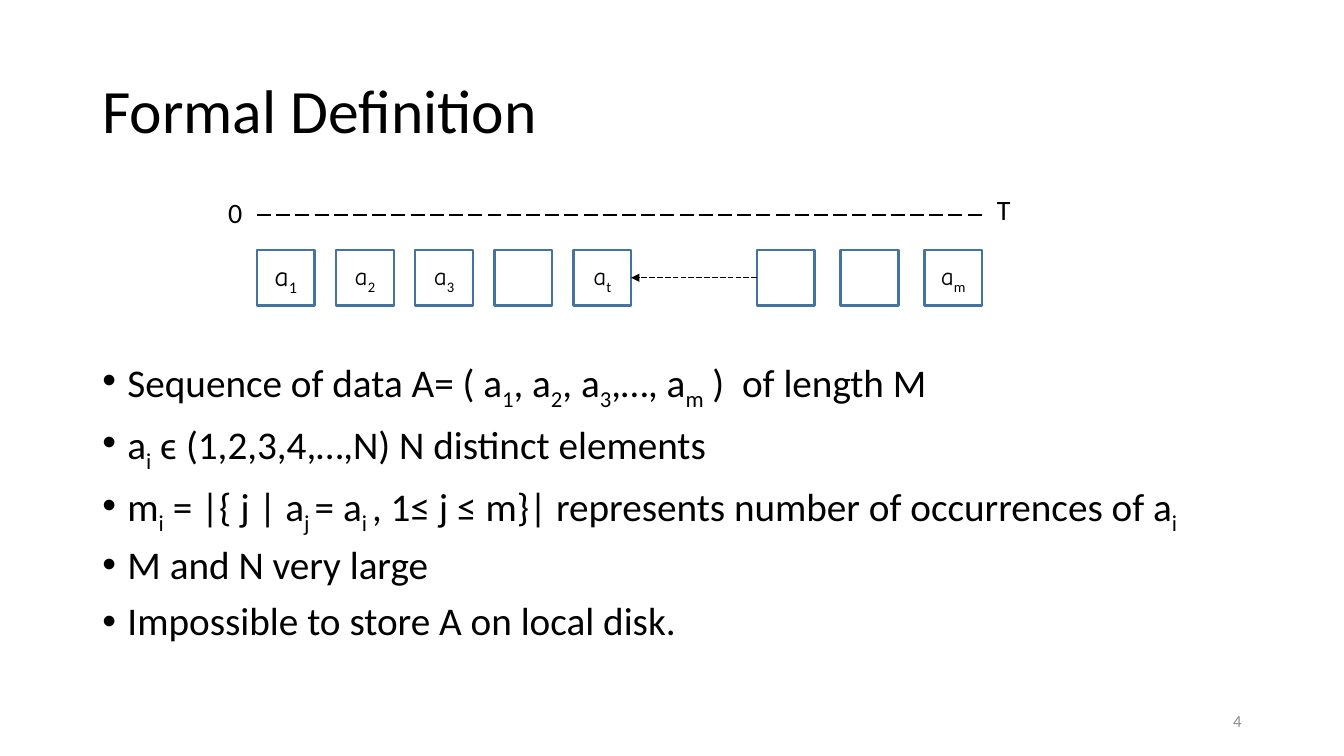
"""Builds a slide that defines a data stream formally."""
from dataclasses import dataclass

from lxml import etree
from pptx import Presentation
from pptx import util as u
from pptx.dml.color import RGBColor
from pptx.enum import dml, shapes, text
from pptx.oxml.ns import qn


@dataclass(frozen=True)
class Theme:
    ink: RGBColor = RGBColor.from_string("000000")
    muted: RGBColor = RGBColor.from_string("8C8C8C")
    outline: RGBColor = RGBColor.from_string("43739E")
    font: str = "Calibri"
    symbol_font: str = "Comic Neue"
    title: int = 44
    body: int = 28
    label: int = 20
    symbol: int = 18
    footer: int = 12


class Deck:
    def __init__(self, theme, width, height):
        self.t = theme
        self.prs = Presentation()
        self.prs.slide_width, self.prs.slide_height = u.Pt(width), u.Pt(height)
        self.s = self.prs.slides.add_slide(self.prs.slide_layouts[5])

    def style(self, r, size, color=None, font=None):
        r.font.size = u.Pt(size)
        r.font.name = font or self.t.font
        r.font.color.rgb = color or self.t.ink

    def runs(self, p, marked, size, font=None):
        for i, part in enumerate(marked.split("~")):
            if part:
                r = p.add_run()
                r.text = part
                self.style(r, size, font=None if i % 2 else font)
                if i % 2:
                    r.font._rPr.set("baseline", "-25000")

    def title(self, words, x, y, w, h):
        sp = self.s.shapes.title
        sp.left, sp.top, sp.width, sp.height = map(u.Pt, (x, y, w, h))
        tf = sp.text_frame
        tf.text = words
        tf.vertical_anchor = text.MSO_ANCHOR.MIDDLE
        p = tf.paragraphs[0]
        p.alignment, p.line_spacing = text.PP_ALIGN.LEFT, 0.9
        self.style(p.runs[0], self.t.title)

    def frame(self, x, y, w, h):
        tf = self.s.shapes.add_textbox(*map(u.Pt, (x, y, w, h))).text_frame
        tf.word_wrap = True
        return tf

    def label(self, words, x, y, w, h, size, align=text.PP_ALIGN.CENTER, color=None):
        tf = self.frame(x, y, w, h)
        tf.vertical_anchor = text.MSO_ANCHOR.MIDDLE
        tf.text = words
        p = tf.paragraphs[0]
        p.alignment = align
        self.style(p.runs[0], size, color)

    def bullets(self, items, x, y, w, h):
        tf = self.frame(x, y, w, h)
        for i, item in enumerate(items):
            p = tf.add_paragraph() if i else tf.paragraphs[0]
            p.line_spacing = 0.9
            p.space_before = u.Pt(10 if i else 0)
            pPr = p._p.get_or_add_pPr()
            pPr.set("marL", str(u.Pt(18)))
            pPr.set("indent", str(-u.Pt(18)))
            etree.SubElement(pPr, qn("a:buFont")).set("typeface", "Arial")
            etree.SubElement(pPr, qn("a:buChar")).set("char", "•")
            self.runs(p, item, self.t.body)

    def cell(self, marked, x, y, w, h, size):
        sp = self.s.shapes.add_shape(shapes.MSO_SHAPE.RECTANGLE, *map(u.Pt, (x, y, w, h)))
        sp.shadow.inherit = False
        sp.fill.background()
        sp.line.color.rgb = self.t.outline
        sp.line.width = u.Pt(1.75)
        tf = sp.text_frame
        tf.vertical_anchor = text.MSO_ANCHOR.MIDDLE
        p = tf.paragraphs[0]
        p.alignment = text.PP_ALIGN.CENTER
        self.runs(p, marked, size, self.t.symbol_font)

    def dashes(self, x1, x2, y, width, arrow=False):
        c = self.s.shapes.add_connector(
            shapes.MSO_CONNECTOR.STRAIGHT, *map(u.Pt, (x1, y, x2, y)))
        c.line.color.rgb = self.t.ink
        c.line.width = u.Pt(width)
        c.line.dash_style = dml.MSO_LINE.LONG_DASH
        if arrow:
            etree.SubElement(c.line._get_or_add_ln(), qn("a:tailEnd")).set("type", "triangle")
        etree.SubElement(c._element.spPr, qn("a:effectLst"))


def main():
    t = Theme()
    d = Deck(t, 960, 540)
    d.title("Formal Definition", 66, 28.75, 828, 104.4)
    d.bullets([
        "Sequence of data A= ( a~1~, a~2~, a~3~,…, a~m~ )  of length M",
        "a~i~ ϵ (1,2,3,4,…,N) N distinct elements",
        "m~i~ = |{ j | a~j ~= a~i ~, 1≤ j ≤ m}| represents number of occurrences of a~i~",
        "M and N very large",
        "Impossible to store A on local disk.",
    ], 66, 252.7, 828, 234)

    side, tall, top = 41.2, 39.6, 178.6
    first, later = 183.6, 540.7
    groups = [(first, 56.5, ["a~1~", "a~2~", "a~3~", "", "a~t~"]),
              (later, 59.8, ["", "", "a~m~"])]
    for start, pitch, names in groups:
        for i, name in enumerate(names):
            size = t.label if name == "a~1~" else t.symbol
            d.cell(name, start + i * pitch, top, side, tall, size)
    end = later + 2 * 59.8 + side
    d.dashes(later, first + 4 * 56.5 + side, top + tall / 2, 0.5, arrow=True)
    d.dashes(first, end, 153.4, 1.25)
    d.label("0", first - 31, 135.4, 31, 33, t.label)
    d.label("T", end, 133.2, 31, 33, t.label)
    d.label("4", 678, 500.5, 216, 28.75, t.footer, text.PP_ALIGN.RIGHT, t.muted)
    d.prs.save("out.pptx")


if __name__ == "__main__":
    main()
